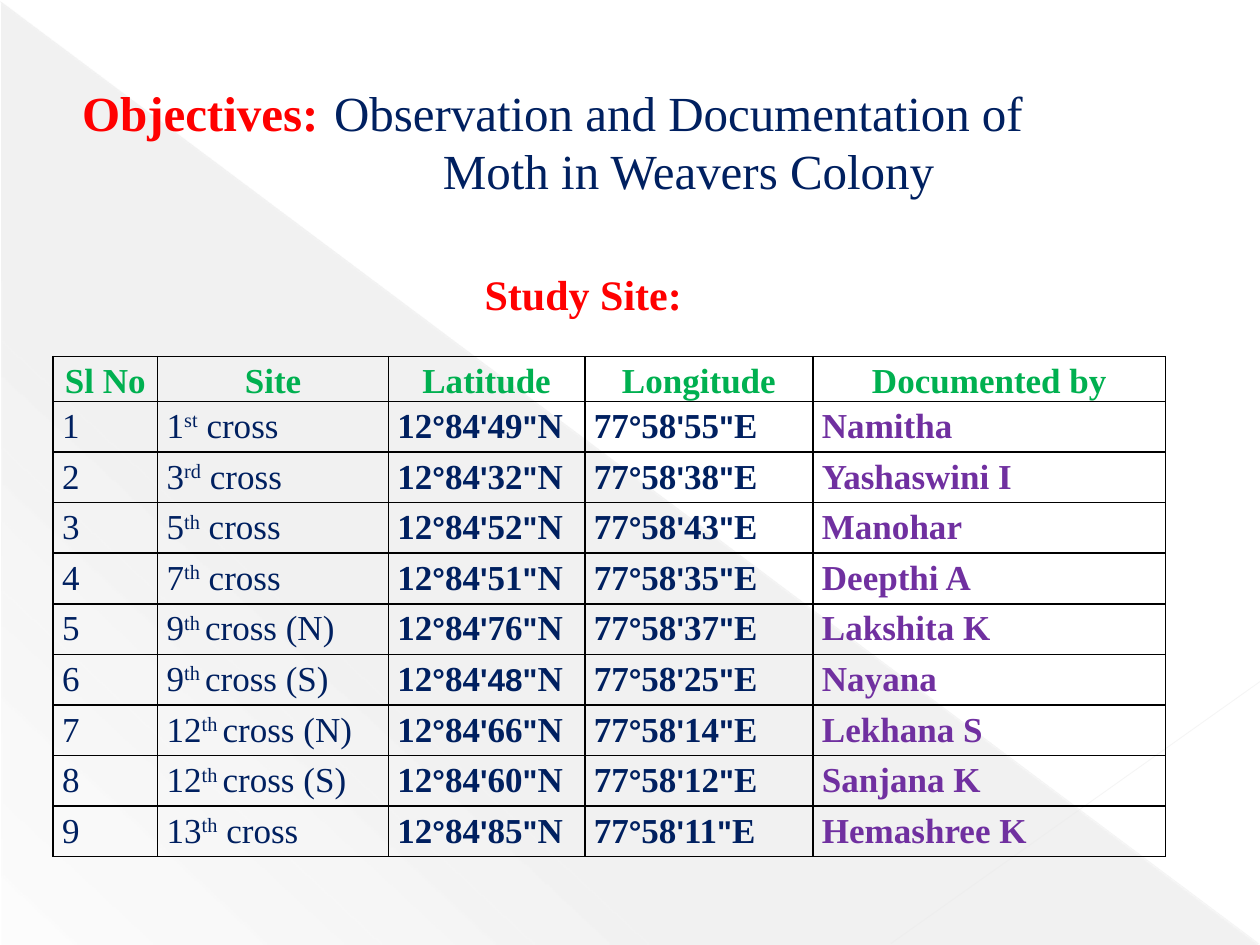
from lxml import etree
from pptx import Presentation
from pptx import util as u
from pptx.dml.color import RGBColor
from pptx.enum import shapes, text
from pptx.oxml import parse_xml
from pptx.oxml.ns import nsdecls, qn

SERIF, SANS = "Times New Roman", "Arial"
RED, NAVY, GREEN, PURPLE = "FF0000", "002060", "00B050", "7030A0"
LEFT, CENTER = text.PP_ALIGN.LEFT, text.PP_ALIGN.CENTER

HEADERS = ["Sl No", "Site", "Latitude", "Longitude", "Documented by"]
COLUMN_WIDTHS = [2.11, 4.65, 3.96, 4.6, 7.11]
# Bars separate the runs: every second run takes the alternate style.
SITES = [
    ("1|st| cross", "49|\"", "55", "Namitha"),
    ("3|rd| cross", "32|\"", "38", "Yashaswini I"),
    ("5|th| cross", "52|\"", "43", "Manohar"),
    ("7|th| cross", "51|\"", "35", "Deepthi A"),
    ("9|th |cross (N)", "76|\"", "37", "Lakshita K"),
    ("9|th |cross (S)", "48\"", "25", "Nayana"),
    ("12|th |cross (N)", "66|\"", "14", "Lekhana S"),
    ("12|th |cross (S)", "60|\"", "12", "Sanjana K"),
    ("13|th| cross", "85|\"", "11", "Hemashree K"),
]


def rgb(value):
    return RGBColor.from_string(value)


class SlideBuilder:
    def __init__(self, prs):
        self.slide = prs.slides.add_slide(prs.slide_layouts[5])

    def style(self, r, color, size, bold=False, font=SERIF):
        r.font.name, r.font.size, r.font.bold = font, u.Pt(size), bold
        r.font.color.rgb = rgb(color)

    def triangle(self, x, y, w, h, color, stops, angle):
        """Right triangle with a gradient of (position %, opacity %) stops."""
        sp = self.slide.shapes.add_shape(
            shapes.MSO_SHAPE.RIGHT_TRIANGLE, u.Cm(x), u.Cm(y), u.Cm(w), u.Cm(h))
        sp.shadow.inherit = False
        sp.line.fill.background()
        sp.fill.background()
        gs = "".join(
            f'<a:gs pos="{pos * 1000}"><a:srgbClr val="{color}">'
            f'<a:alpha val="{alpha * 1000}"/></a:srgbClr></a:gs>'
            for pos, alpha in stops)
        gradient = parse_xml(
            f'<a:gradFill {nsdecls("a")} rotWithShape="1"><a:gsLst>{gs}</a:gsLst>'
            f'<a:lin ang="{angle * 60000}" scaled="0"/></a:gradFill>')
        spPr = sp.element.spPr
        spPr.replace(spPr.find(qn("a:noFill")), gradient)

    def line(self, x1, y1, x2, y2, color, width, alpha):
        cxn = self.slide.shapes.add_connector(
            shapes.MSO_CONNECTOR.STRAIGHT, u.Cm(x1), u.Cm(y1), u.Cm(x2), u.Cm(y2))
        cxn.line.width = u.Pt(width)
        cxn.line.color.rgb = rgb(color)
        spPr = cxn.element.spPr
        clr = spPr.find(".//" + qn("a:srgbClr"))
        etree.SubElement(clr, qn("a:alpha"), val=str(alpha * 1000))
        etree.SubElement(spPr, qn("a:effectLst"))

    def title(self, x, y, w, h, label, first, second, indent):
        sp = self.slide.shapes.title
        sp.element.getparent().append(sp.element)  # in front of the backdrop
        sp.left, sp.top, sp.width, sp.height = u.Cm(x), u.Cm(y), u.Cm(w), u.Cm(h)
        tf = sp.text_frame
        tf.vertical_anchor = text.MSO_ANCHOR.MIDDLE
        p = tf.paragraphs[0]
        p.alignment = LEFT
        for content, color, bold in ((label + "\t", RED, True), (first, NAVY, False)):
            r = p.add_run()
            r.text = content
            self.style(r, color, 28, bold)
        p = tf.add_paragraph()
        p.text = second
        p.alignment = CENTER
        p._p.get_or_add_pPr().set("marL", str(u.Cm(indent)))
        self.style(p.runs[0], NAVY, 28)

    def heading(self, x, y, w, h, content):
        sp = self.slide.shapes.add_textbox(u.Cm(x), u.Cm(y), u.Cm(w), u.Cm(h))
        tf = sp.text_frame
        tf.word_wrap = True
        tf.vertical_anchor = text.MSO_ANCHOR.MIDDLE
        tf.text = content
        self.style(tf.paragraphs[0].runs[0], RED, 24, True)

    def table(self, x, y, widths, head_height, row_height, rows):
        heights = [head_height] + [row_height] * (len(rows) - 1)
        tbl = self.slide.shapes.add_table(
            len(rows), len(widths), u.Cm(x), u.Cm(y),
            u.Cm(sum(widths)), u.Cm(sum(heights))).table
        tbl.first_row = tbl.horz_banding = False
        for column, width in zip(tbl.columns, widths):
            column.width = u.Cm(width)
        for i, row in enumerate(rows):
            tbl.rows[i].height = u.Cm(heights[i])
            for j, content in enumerate(row):
                self.cell(tbl.cell(i, j), content, i == 0, j)

    def cell(self, cell, content, is_header, column):
        cell.margin_left = cell.margin_right = u.Cm(0.18)
        cell.margin_top = cell.margin_bottom = 0
        self.borders(cell)
        cell.fill.background()
        p = cell.text_frame.paragraphs[0]
        p.line_spacing = 1.15
        p.alignment = CENTER if is_header else LEFT
        color = GREEN if is_header else PURPLE if column == 4 else NAVY
        bold = is_header or column >= 2
        for k, part in enumerate(content.split("|")):
            r = p.add_run()
            r.text = part
            alternate = k % 2 == 1
            if alternate and column >= 2:
                self.style(r, color, 18, bold, SANS)
            else:
                self.style(r, color, 20, bold)
            if alternate and column == 1:
                r._r.get_or_add_rPr().set("baseline", "30000")

    def borders(self, cell):
        tcPr = cell._tc.get_or_add_tcPr()
        for side in ("lnL", "lnR", "lnT", "lnB"):
            tcPr.append(parse_xml(
                f'<a:{side} {nsdecls("a")} w="{u.Pt(1)}"><a:solidFill>'
                f'<a:srgbClr val="000000"/></a:solidFill></a:{side}>'))


def main():
    prs = Presentation()
    prs.slide_width, prs.slide_height = u.Cm(25.4), u.Cm(19.05)
    s = SlideBuilder(prs)
    s.triangle(0.03, 0.05, 25.35, 19, "666666", [(0, 10), (70, 8), (100, 1)], 133)
    s.line(0, 0.03, 25.37, 19.02, "E8E8E8", 0.39, 35)
    s.line(25.4, 13.74, 17.96, 19.02, "EAEAEA", 0.47, 45)
    s.title(1.4, 1.52, 22.73, 2.64, "Objectives:",
            "Observation and Documentation of", "Moth in Weavers Colony", 2.23)
    rows = [HEADERS] + [
        (str(n), site, f"12|°|84|'|{lat}|N" if "|" in lat else f"12|°|84|'{lat}|N",
         f"77|°|58|'|{lon}|\"|E", name)
        for n, (site, lat, lon, name) in enumerate(SITES, 1)]
    s.table(1.07, 7.19, COLUMN_WIDTHS, 0.81, 1.02, rows)
    s.heading(9.52, 5.28, 5.28, 1.27, "Study Site:")
    prs.save("out.pptx")


if __name__ == "__main__":
    main()
